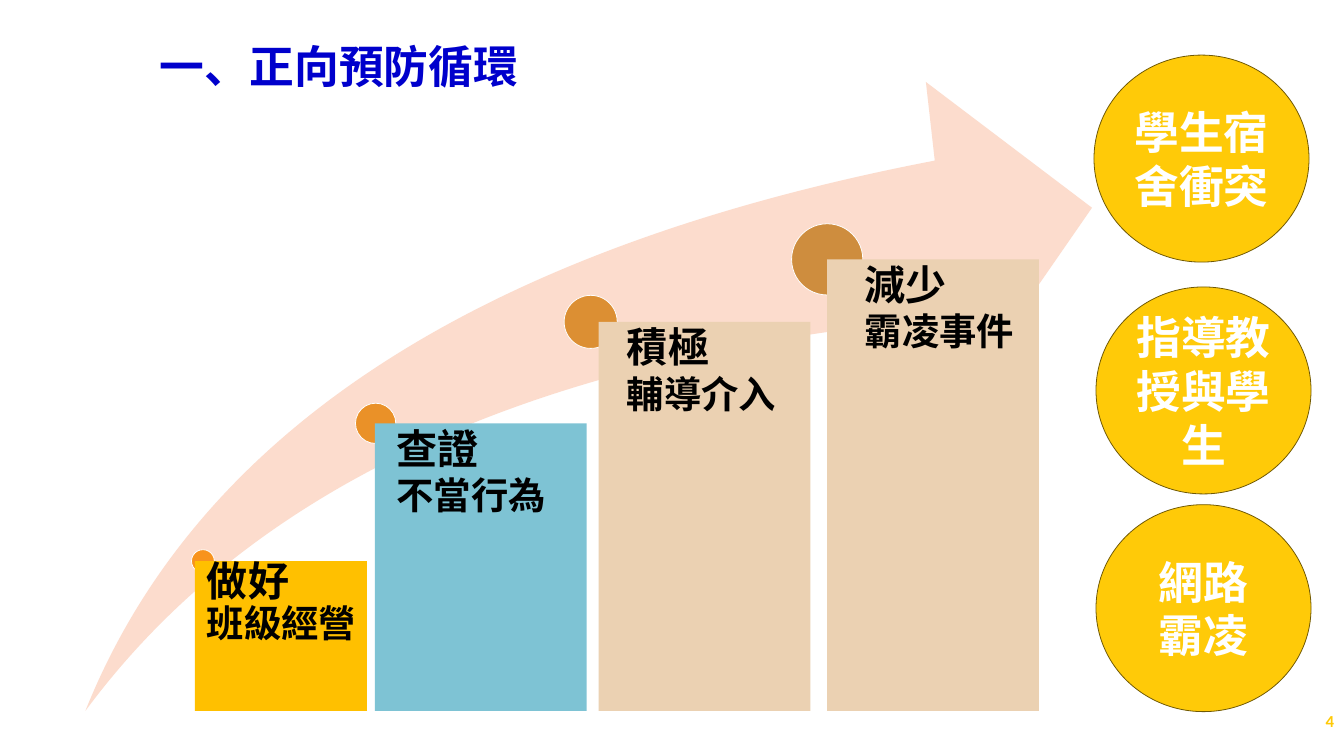
from pptx import Presentation
from pptx import util as u
from pptx.dml import color
from pptx.enum import shapes, text

deck = Presentation()
deck.slide_width, deck.slide_height = u.Inches(20), u.Inches(11.25)
col, row = deck.slide_width / 20, deck.slide_height / 11.25
page = deck.slides.add_slide(deck.slide_layouts[5])
kind = shapes.MSO_SHAPE
side = text.PP_ALIGN
mid = text.MSO_ANCHOR.MIDDLE


def draw(form, box, fill, edge=None):
    x, y, w, h = box
    item = page.shapes.add_shape(form, int(x * col), int(y * row), int(w * col), int(h * row))
    item.shadow.inherit = False
    item.fill.solid()
    item.fill.fore_color.rgb = color.RGBColor.from_string(fill)
    if edge:
        item.line.color.rgb = color.RGBColor.from_string(edge)
        item.line.width = u.Pt(0.85)
    else:
        item.line.fill.background()
    return item


def write(item, lines, hue, align=side.LEFT, face="Calibri", gap=None, **frame):
    body = item.text_frame
    look = {"word_wrap": True, "auto_size": text.MSO_AUTO_SIZE.NONE, **frame}
    for name, value in look.items():
        setattr(body, name, value)
    for i, (words, size) in enumerate(lines):
        para = body.add_paragraph() if i else body.paragraphs[0]
        para.alignment, para.line_spacing = align, gap
        run = para.add_run()
        run.text = words
        for name, value in {"name": face, "size": u.Pt(size), "bold": True}.items():
            setattr(run.font, name, value)
        run.font.color.rgb = color.RGBColor.from_string(hue)


# Title
head = page.shapes.title
spot = {"left": 2.28 * col, "top": 0.27 * row, "width": 17.17 * col, "height": 1.42 * row}
for name, value in spot.items():
    setattr(head, name, int(value))
write(head, [("一、正向預防循環", 48)], "0000CC", face="Arial", vertical_anchor=mid)

# Rising arrow
arrow = draw(kind.SWOOSH_ARROW, (1.27, 1.22, 14.98, 9.36), "FCDCCD")
arrow.adjustments[0] = arrow.adjustments[1] = 0.25

# Steps: left, top, width, fill, inset, spacing, dot centre, dot size, dot fill, words
base = 10.58
steps = [
    (2.9, 8.35, 2.56, "FFC000", 0.18, 0.9, 3.02, 0.34, "F8931D", "做好", "班級經營"),
    (5.58, 6.3, 3.15, "7EC3D4", 0.32, None, 5.59, 0.6, "EA9128", "查證", "不當行為"),
    (8.91, 4.79, 3.15, "EBD1B2", 0.42, None, 8.79, 0.79, "DC8F33", "積極", "輔導介入"),
    (12.31, 3.86, 3.15, "EBD1B2", 0.56, None, 12.31, 1.06, "CE8D3E", "減少", "霸凌事件"),
]
for x, y, w, fill, inset, gap, dot, size, tint, top, low in steps:
    draw(kind.OVAL, (dot - size / 2, y - size / 2, size, size), tint, "FFFFFF")
    bar = draw(kind.RECTANGLE, (x, y, w, base - y), fill)
    write(bar, [(top, 44), (low, 40)], "000000", gap=gap,
          vertical_anchor=text.MSO_ANCHOR.TOP, margin_left=int(inset * col),
          margin_top=0, margin_right=0, margin_bottom=0)

# Issue circles
issues = [
    (16.28, 0.82, ["學生宿舍衝突"]),
    (16.31, 4.27, ["指導教授與學生"]),
    (16.31, 7.51, ["網路", "霸凌"]),
]
for x, y, words in issues:
    disc = draw(kind.OVAL, (x, y, 3.2, 3.08), "FFCA08", "705904")
    write(disc, [(word, 48) for word in words], "FFFFFF", side.CENTER, vertical_anchor=mid)

# Page number
num = page.shapes.add_textbox(int(17.44 * col), int(10.43 * row), int(2.51 * col), int(0.6 * row))
write(num, [("4", 18)], "FFCA08", side.RIGHT, vertical_anchor=mid)

deck.save("out.pptx")
